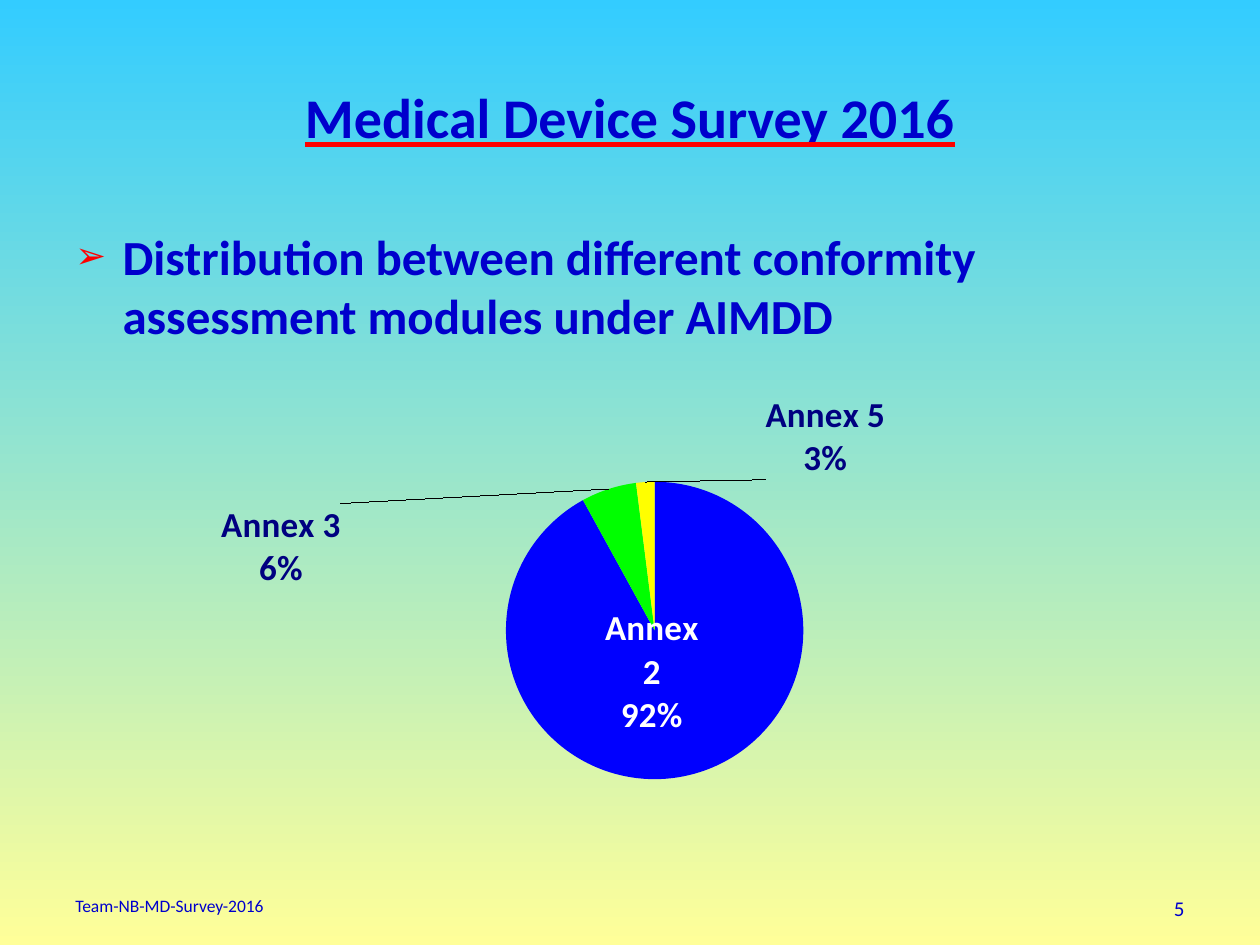
from lxml.etree import SubElement
from pptx import Presentation
from pptx.chart.data import CategoryChartData
from pptx.dml.color import RGBColor
from pptx.enum.chart import XL_CHART_TYPE as ChartType, XL_LABEL_POSITION as LabelPosition
from pptx.enum.text import MSO_ANCHOR as Anchor, PP_ALIGN as Align
from pptx.oxml import parse_xml
from pptx.oxml.ns import nsdecls, qn
from pptx.util import Pt


def color(value):
    return RGBColor.from_string(value)


def add_layout(parent, index, target, **values):
    layout = parse_xml(f"<c:layout {nsdecls('c')}><c:manualLayout/></c:layout>")
    if target:
        SubElement(layout[0], qn("c:layoutTarget"), val=target)
        for mode in ("xMode", "yMode"):
            SubElement(layout[0], qn(f"c:{mode}"), val="edge")
    for name, value in values.items():
        SubElement(layout[0], qn(f"c:{name}"), val=str(value))
    for old in parent.findall(qn("c:layout")):
        parent.remove(old)
    parent.insert(index, layout)


deck = Presentation()
deck.slide_width, deck.slide_height = Pt(720), Pt(540)
page = deck.slides.add_slide(deck.slide_layouts[6])
background = page.background.fill
background.gradient()
background.gradient_angle = 270
for stop, position, shade in zip(background.gradient_stops, (0, 1), ("33CCFF", "FFFF99")):
    stop.position = position
    stop.color.rgb = color(shade)

texts = [
    ("title", "Medical Device Survey 2016", (36, 21.6, 648, 90), 32, Align.CENTER),
    ("topic", "Distribution between different conformity assessment modules under AIMDD",
     (36, 126, 648, 59), 28, Align.LEFT),
    ("footer", "Team-NB-MD-Survey-2016", (36, 508, 228, 21), 10, Align.LEFT),
    ("number", "5", (516.2, 508.3, 167.8, 21), 12, Align.RIGHT),
]
for role, text, place, size, align in texts:
    box = page.shapes.add_textbox(*map(Pt, place))
    frame = box.text_frame
    frame.word_wrap = True
    para = frame.paragraphs[0]
    para.alignment = align
    if role == "topic":
        props = para._p.get_or_add_pPr()
        props.set("marL", str(Pt(27)))
        props.set("indent", str(Pt(-27)))
        bullet_color = SubElement(props, qn("a:buClr"))
        SubElement(bullet_color, qn("a:srgbClr"), val="FF0000")
        SubElement(props, qn("a:buSzPct"), val="75000")
        SubElement(props, qn("a:buFont"), typeface="Arial")
        SubElement(props, qn("a:buChar"), char="➢")
    span = para.add_run()
    span.text = text
    span.font.size = Pt(size)
    span.font.bold = size > 20
    span.font.color.rgb = color("0000CC")
    if role == "title":
        frame.vertical_anchor = Anchor.MIDDLE
        span.font.underline = True
        underline = SubElement(span.font._element, qn("a:uFill"))
        fill = SubElement(underline, qn("a:solidFill"))
        SubElement(fill, qn("a:srgbClr"), val="FF0000")
    span.font.name = "Calibri"

data = CategoryChartData()
data.categories = ["Annex 2", "Annex 3", "Annex 4", "Annex 5"]
data.add_series("Series 1", (92, 6, 0, 2))
chart = page.shapes.add_chart(
    ChartType.PIE, Pt(70.6), Pt(213.1), Pt(607), Pt(294.5), data).chart
chart.has_legend = False
chart.has_title = False
chart.font.name = "Arial"
chart.font.size = Pt(10)
chart.font.color.rgb = color("000000")
plot = chart.plots[0]
plot.vary_by_categories = True
series = plot.series[0]
for index, shade in enumerate(("0000FF", "00FF00", "FFFFFF", "FFFF00")):
    fill = series.points[index].format.fill
    fill.solid()
    fill.fore_color.rgb = color(shade)
series.data_labels.show_value = False

labels = [
    (0, "FFFFFF", LabelPosition.CENTER, -0.02, -0.06),
    (1, "000080", LabelPosition.OUTSIDE_END, -0.25, 0.21),
    (3, "000080", LabelPosition.OUTSIDE_END, 0.17, 0.01),
]
for index, shade, position, x, y in labels:
    label = series.points[index].data_label
    if index == 3:
        frame = label.text_frame
        fonts = []
        for para, text in zip((frame.paragraphs[0], frame.add_paragraph()), ("Annex 5", "3%")):
            span = para.add_run()
            span.text = text
            fonts.append(span.font)
    else:
        fonts = [label.font]
    for font in fonts:
        font.name = "Calibri"
        font.size = Pt(20)
        font.bold = True
        font.color.rgb = color(shade)
    label.position = position
    element = series.data_labels._element.xpath(f"c:dLbl[c:idx/@val='{index}']")[0]
    for tag, shown in (("showVal", "0"), ("showCatName", "1"), ("showPercent", "1")):
        element.find(qn(f"c:{tag}")).set("val", shown)
    SubElement(element, qn("c:separator")).text = "\n"
    add_layout(element, 1, None, x=x, y=y)

add_layout(chart._chartSpace.chart.plotArea, 0, "inner", x=0.36, y=0.21, w=0.28, h=0.58)

deck.save("out.pptx")
